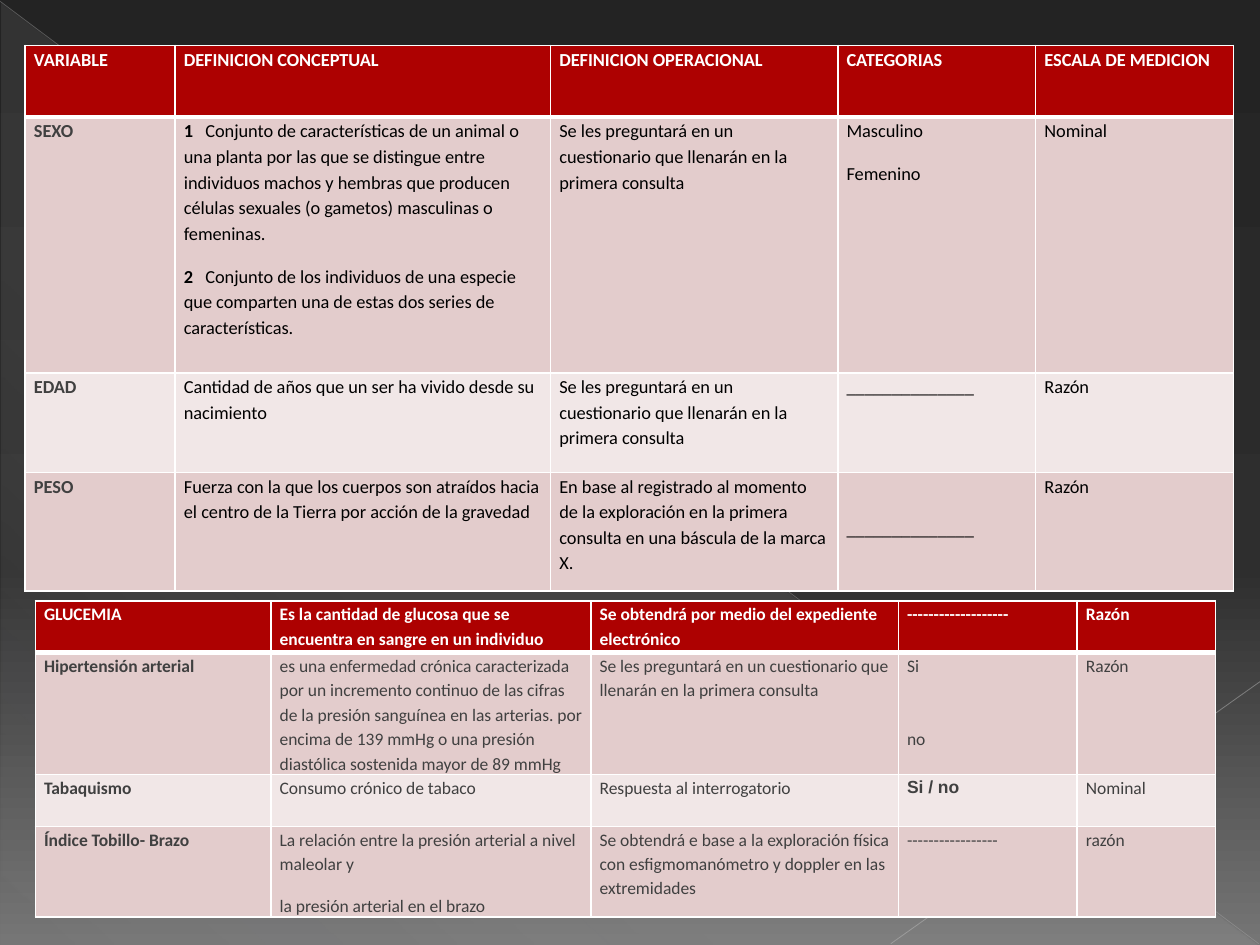
from lxml.etree import SubElement
from pptx import Presentation
from pptx.dml.color import RGBColor
from pptx.enum.shapes import MSO_CONNECTOR, MSO_SHAPE
from pptx.oxml.ns import qn
from pptx.util import Inches, Pt

WHITE = RGBColor(0xFF, 0xFF, 0xFF)
BLACK = RGBColor(0x00, 0x00, 0x00)
CHARCOAL = RGBColor(0x40, 0x40, 0x40)
CRIMSON = RGBColor(0xAD, 0x01, 0x01)
ROSE = RGBColor(0xE3, 0xCC, 0xCC)
PALE_ROSE = RGBColor(0xF1, 0xE7, 0xE7)
NIGHT = RGBColor(0x23, 0x23, 0x23)
COAL = RGBColor(0x2E, 0x2E, 0x2E)
ASH = RGBColor(0x75, 0x75, 0x75)
MIST = RGBColor(0xDE, 0xDE, 0xE0)
SILVER = RGBColor(0xB6, 0xB6, 0xB6)
LIGHT_SILVER = RGBColor(0xBE, 0xBE, 0xBE)

QUESTIONNAIRE = "Se les preguntará en un cuestionario que llenarán en la primera consulta"
BLANK_LINE = "_" * 14

GENERAL_VARIABLES = [
    ["VARIABLE", "DEFINICION CONCEPTUAL", "DEFINICION OPERACIONAL", "CATEGORIAS", "ESCALA DE MEDICION"],
    ["SEXO",
     "1\tConjunto de características de un animal o una planta por las que se distingue entre "
     "individuos machos y hembras que producen células sexuales (o gametos) masculinas o femeninas.\n"
     "2\tConjunto de los individuos de una especie que comparten una de estas dos series de características.",
     QUESTIONNAIRE, "Masculino\nFemenino", "Nominal"],
    ["EDAD", "Cantidad de años que un ser ha vivido desde su nacimiento", QUESTIONNAIRE, BLANK_LINE, "Razón"],
    ["PESO",
     "Fuerza con la que los cuerpos son atraídos hacia el centro de la Tierra por acción de la gravedad",
     "En base al registrado al momento de la exploración en la primera consulta en una báscula de la marca X.",
     BLANK_LINE, "Razón"],
]
CLINICAL_VARIABLES = [
    ["GLUCEMIA", "Es la cantidad de glucosa que se encuentra en sangre en un individuo",
     "Se obtendrá por medio del expediente electrónico", "-" * 19, "Razón"],
    ["Hipertensión arterial",
     "es una enfermedad crónica caracterizada por un incremento continuo de las cifras de la presión "
     "sanguínea en las arterias. por encima de 139 mmHg o una presión diastólica sostenida mayor de 89 mmHg",
     QUESTIONNAIRE, "Si\nno", "Razón"],
    ["Tabaquismo", "Consumo crónico de tabaco", "Respuesta al interrogatorio", "Si / no", "Nominal"],
    ["Índice Tobillo- Brazo",
     "La relación entre la presión arterial a nivel maleolar y\nla presión arterial en el brazo",
     "Se obtendrá e base a la exploración física con esfigmomanómetro y doppler en las extremidades",
     "-" * 17, "razón"],
]
SPECIAL_FORMATS = {
    "Si / no": {"font": "Arial", "bold": True},
    "Si\nno": {"gap": 28},
}


def add_color(parent, color, opacity=100):
    """Append an RGB colour with an opacity in percent."""
    srgb = SubElement(parent, qn("a:srgbClr"), val=str(color))
    if opacity < 100:
        SubElement(srgb, qn("a:alpha"), val=str(opacity * 1000))


def set_gradient(fill, owner, stops, angle):
    """Replace the fill of owner by a linear gradient."""
    fill.solid()
    solid = owner.find(qn("a:solidFill"))
    gradient = SubElement(owner, qn("a:gradFill"), rotWithShape="1")
    owner.replace(solid, gradient)
    stop_list = SubElement(gradient, qn("a:gsLst"))
    for position, color, opacity in stops:
        stop = SubElement(stop_list, qn("a:gs"), pos=str(position * 1000))
        add_color(stop, color, opacity)
    SubElement(gradient, qn("a:lin"), ang=str(angle * 60000), scaled="0")


def add_background(slide):
    """Draw the dark gradient and the translucent triangle."""
    background = slide.background.fill
    set_gradient(background, slide.element.find(".//" + qn("p:bgPr")),
                 [(0, NIGHT, 100), (60, COAL, 100), (100, ASH, 100)], 90)
    triangle = slide.shapes.add_shape(
        MSO_SHAPE.RIGHT_TRIANGLE, Inches(0.01), Inches(0.02), Inches(9.98), Inches(7.48))
    triangle.shadow.inherit = False
    triangle.line.fill.background()
    set_gradient(triangle.fill, triangle.element.spPr,
                 [(0, MIST, 10), (70, MIST, 8), (100, MIST, 1)], 133)


def add_line(slide, start, end, color, width, opacity):
    """Draw a translucent straight line."""
    line = slide.shapes.add_connector(
        MSO_CONNECTOR.STRAIGHT, *(Inches(value) for value in start + end))
    line.line.width = Pt(width)
    line.line.color.rgb = color
    srgb = line.element.spPr.find(".//" + qn("a:srgbClr"))
    SubElement(srgb, qn("a:alpha"), val=str(opacity * 1000))
    SubElement(line.element.spPr, qn("a:effectLst"))


def write(frame, text, size, color, bold=False, font="Calibri", after=0, gap=0):
    """Write paragraphs, with a bold number before any tab."""
    for index, content in enumerate(text.split("\n")):
        paragraph = frame.add_paragraph() if index else frame.paragraphs[0]
        paragraph.line_spacing = 1.15
        paragraph.space_before = Pt(gap if index else 0)
        paragraph.space_after = Pt(after)
        number, tab, body = content.rpartition("\t")
        if tab:
            tabs = SubElement(paragraph._p.get_or_add_pPr(), qn("a:tabLst"))
            SubElement(tabs, qn("a:tab"), pos=str(Inches(0.17)), algn="l")
        for piece, heavy in ((number, True), (tab + body, bold)):
            if piece:
                run = paragraph.add_run()
                run.text = piece
                run.font.size = Pt(size)
                run.font.name = font
                run.font.bold = heavy
                run.font.color.rgb = color


def style_cell(cell, fill, bottom_width):
    """Set margins, white borders and fill of a cell."""
    cell.margin_left = cell.margin_right = Inches(0.07)
    cell.margin_top = cell.margin_bottom = 0
    properties = cell._tc.get_or_add_tcPr()
    for side, width in (("L", 1), ("R", 1), ("T", 1), ("B", bottom_width)):
        border = SubElement(properties, qn(f"a:ln{side}"), w=str(Pt(width)))
        add_color(SubElement(border, qn("a:solidFill")), WHITE)
    cell.fill.solid()
    cell.fill.fore_color.rgb = fill


def add_variables(slide, rows, left, top, widths, heights, size, body_color, afters):
    """Add a table of variables and return it."""
    table = slide.shapes.add_table(
        len(rows), len(widths), Inches(left), Inches(top),
        Inches(sum(widths)), Inches(sum(heights))).table
    for column, width in zip(table.columns, widths):
        column.width = Inches(width)
    for r, (texts, height, after) in enumerate(zip(rows, heights, afters)):
        table.rows[r].height = Inches(height)
        header = r == 0
        fill = CRIMSON if header else ROSE if r % 2 else PALE_ROSE
        for c, text in enumerate(texts):
            cell = table.cell(r, c)
            style_cell(cell, fill, 3 if header else 1)
            color = WHITE if header else body_color if c else CHARCOAL
            settings = {"bold": header or c == 0, "after": after, **SPECIAL_FORMATS.get(text, {})}
            write(cell.text_frame, text, size, color, **settings)
    return table


def main():
    """Build the slide with its two tables of variables."""
    deck = Presentation()
    deck.slide_width, deck.slide_height = Inches(10), Inches(7.5)
    slide = deck.slides.add_slide(deck.slide_layouts[6])
    add_background(slide)
    add_line(slide, (0, 0.01), (9.99, 7.49), SILVER, 0.39, 35)
    add_line(slide, (10, 5.41), (7.07, 7.49), LIGHT_SILVER, 0.47, 45)
    general = add_variables(
        slide, GENERAL_VARIABLES, 0.2, 0.36, [1.19, 2.98, 2.28, 1.57, 1.57],
        [0.57, 2.03, 0.79, 0.94], 10.5, BLACK, [10, 10, 10, 10])
    general.cell(3, 3).margin_top = Inches(0.34)
    add_variables(
        slide, CLINICAL_VARIABLES, 0.28, 4.77, [1.87, 2.54, 2.44, 1.42, 1.1],
        [0.41, 0.95, 0.41, 0.72], 10, CHARCOAL, [10, 0, 0, 10])
    deck.save("out.pptx")


if __name__ == "__main__":
    main()
